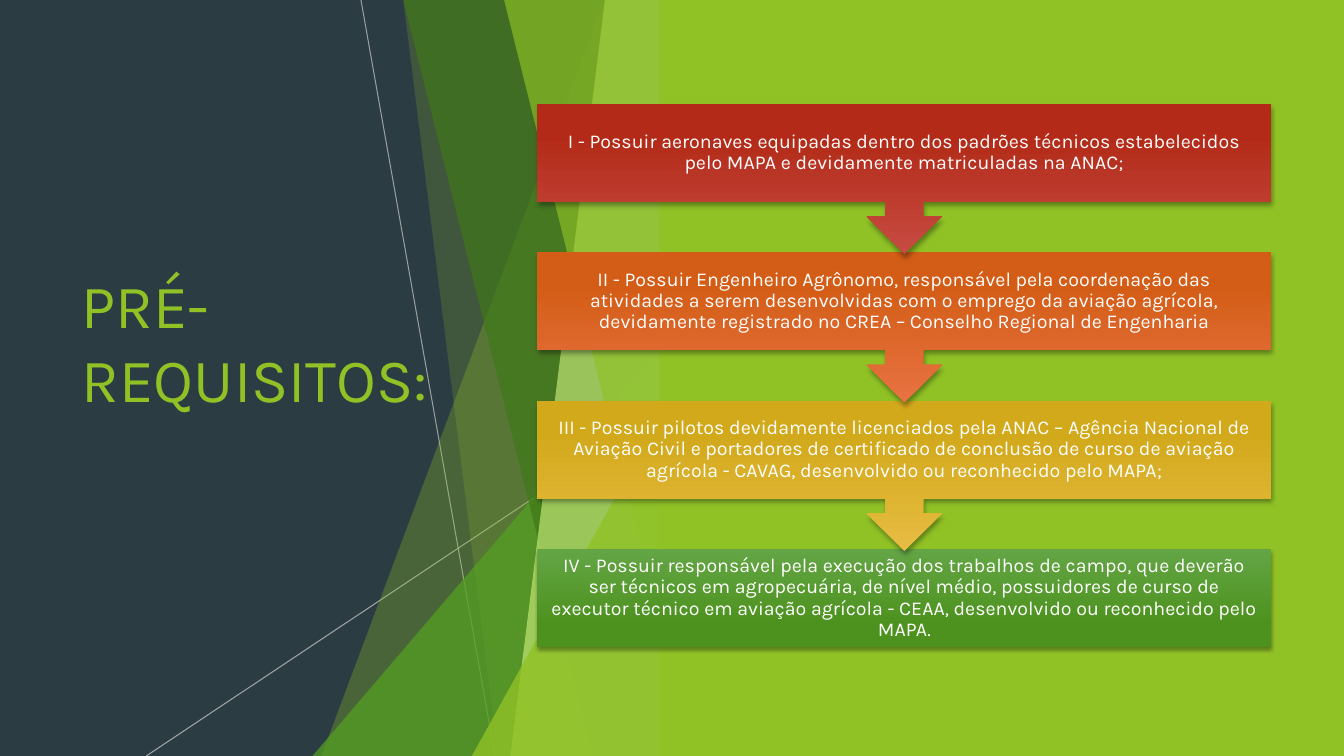
"""Build the slide that lists the four prior needs as a chain of steps."""
import dataclasses
import typing

import lxml.etree
import pptx
import pptx.dml.color
import pptx.enum.shapes
import pptx.enum.text
import pptx.oxml
import pptx.oxml.ns
import pptx.util

Inches = pptx.util.Inches
Pt = pptx.util.Pt
SHAPE = pptx.enum.shapes.MSO_SHAPE
ALIGN = pptx.enum.text.PP_ALIGN
ANCHOR = pptx.enum.text.MSO_ANCHOR
FONT = "Karla"
LIME = "90C226"
EDGE = 6.66
HIGH = 7.5
LEFT, TOP, WIDTH, BODY, PITCH, CALL = 5.33, 1.03, 7.28, 0.97, 1.473, 1.49


@dataclasses.dataclass(frozen=True)
class Ray:
    start: tuple[float, float]
    end: tuple[float, float]
    alpha: int


@dataclasses.dataclass(frozen=True)
class Facet:
    top: float
    base: float
    color: str
    alpha: int


@dataclasses.dataclass(frozen=True)
class Peak:
    left: float
    top: float
    color: str
    alpha: int


@dataclasses.dataclass(frozen=True)
class Step:
    light: str
    dark: str
    text: str


RAYS = [
    Ray((3.58, 0), (4.91, HIGH), 75),
    Ray((EDGE, 4.03), (1.45, HIGH), 80),
]
PANES: list[Facet | Peak] = [
    Facet(5.61, 3.37, LIME, 30),
    Facet(3.84, 5.16, LIME, 20),
    Peak(3.1, 3.33, "54A021", 72),
    Facet(3.54, 6.24, "3F7819", 70),
    Facet(6.37, 5.25, "C0E474", 70),
    Facet(5.3, 6.51, LIME, 65),
    Peak(4.68, 3.93, LIME, 80),
]
STEPS = [
    Step("C74B42", "B32B18", "I - Possuir aeronaves equipadas dentro dos padrões técnicos "
         "estabelecidos pelo MAPA e devidamente matriculadas na ANAC;"),
    Step("E87242", "D35D16", "II - Possuir Engenheiro Agrônomo, responsável pela coordenação "
         "das atividades a serem desenvolvidas com o emprego da aviação agrícola, devidamente "
         "registrado no CREA – Conselho Regional de Engenharia"),
    Step("E7BC43", "D2A91B", "III - Possuir pilotos devidamente licenciados pela ANAC – Agência "
         "Nacional de Aviação Civil e portadores de certificado de conclusão de curso de aviação "
         "agrícola - CAVAG, desenvolvido ou reconhecido pelo MAPA;"),
    Step("63A545", "4D921E", "IV - Possuir responsável pela execução dos trabalhos de campo, que "
         "deverão ser técnicos em agropecuária, de nível médio, possuidores de curso de executor "
         "técnico em aviação agrícola - CEAA, desenvolvido ou reconhecido pelo MAPA."),
]


def tint(code: str) -> pptx.dml.color.RGBColor:
    return pptx.dml.color.RGBColor.from_string(code)


def fade(part: typing.Any, alpha: int) -> None:
    color = next(part.iter(pptx.oxml.ns.qn("a:srgbClr")))
    node = lxml.etree.SubElement(color, pptx.oxml.ns.qn("a:alpha"))
    node.set("val", str(alpha * 1000))


def paint(shape: typing.Any, code: str, alpha: int = 100) -> None:
    shape.fill.solid()
    shape.fill.fore_color.rgb = tint(code)
    shape.line.fill.background()
    shape.shadow.inherit = False
    if alpha < 100:
        fade(shape._element.spPr, alpha)


def draw_ray(shapes: typing.Any, ray: Ray) -> None:
    ends = [Inches(n) for n in ray.start + ray.end]
    line = shapes.add_connector(pptx.enum.shapes.MSO_CONNECTOR.STRAIGHT, *ends)
    line.line.color.rgb = tint("BFBFBF")
    line.line.width = Pt(0.75)
    fade(line._element.spPr, ray.alpha)
    lxml.etree.SubElement(line._element.spPr, pptx.oxml.ns.qn("a:effectLst"))


def draw_pane(shapes: typing.Any, pane: Facet | Peak) -> None:
    if isinstance(pane, Peak):
        shape = shapes.add_shape(SHAPE.ISOSCELES_TRIANGLE, Inches(pane.left), Inches(pane.top),
                                 Inches(EDGE - pane.left), Inches(HIGH - pane.top))
        shape.adjustments[0] = 1
    else:
        form = shapes.build_freeform(pane.top, -0.01, scale=Inches(1))
        form.add_line_segments([(EDGE, -0.01), (EDGE, HIGH), (pane.base, HIGH)], close=True)
        shape = form.convert_to_shape()
    paint(shape, pane.color, pane.alpha)


def write(shapes: typing.Any, area: tuple[float, float, float, float], text: str,
          size: int, code: str, align: typing.Any) -> typing.Any:
    frame = shapes.add_textbox(*[Inches(n) for n in area]).text_frame
    frame.word_wrap = True
    frame.vertical_anchor = ANCHOR.MIDDLE
    frame.text = text
    line = frame.paragraphs[0]
    line.alignment = align
    line.font.name = FONT
    line.font.size = Pt(size)
    line.font.color.rgb = tint(code)
    return frame


def shade(shape: typing.Any, step: Step) -> None:
    shape.line.fill.background()
    shape.fill.gradient()
    shape.fill.gradient_angle = 270
    for stop, code, place in zip(shape.fill.gradient_stops, (step.light, step.dark), (0, 0.78)):
        stop.color.rgb = tint(code)
        stop.position = place
    shape._element.spPr.append(pptx.oxml.parse_xml(
        f'<a:effectLst {pptx.oxml.ns.nsdecls("a")}>'
        '<a:outerShdw blurRad="38100" dist="25400" dir="5400000" rotWithShape="0">'
        '<a:srgbClr val="000000"><a:alpha val="35000"/></a:srgbClr>'
        '</a:outerShdw></a:effectLst>'))


def draw_step(shapes: typing.Any, rank: int, step: Step) -> None:
    top = TOP + rank * PITCH
    last = rank == len(STEPS) - 1
    kind = SHAPE.RECTANGLE if last else SHAPE.UP_ARROW_CALLOUT
    shape = shapes.add_shape(kind, Inches(LEFT), Inches(top), Inches(WIDTH),
                             Inches(BODY if last else CALL))
    shape.rotation = 0 if last else 180
    shade(shape, step)
    frame = write(shapes, (LEFT, top, WIDTH, BODY), step.text, 14, "FFFFFF", ALIGN.CENTER)
    frame.margin_left = frame.margin_right = Inches(0.11)
    frame.margin_top = frame.margin_bottom = Inches(0.11)
    frame.paragraphs[0].line_spacing = 0.9
    frame.paragraphs[0].space_after = Pt(4.9)


def main() -> None:
    deck = pptx.Presentation()
    deck.slide_width, deck.slide_height = Inches(13.33), Inches(HIGH)
    slide = deck.slides.add_slide(deck.slide_layouts[6])
    slide.background.fill.solid()
    slide.background.fill.fore_color.rgb = tint("2C3C43")
    shapes = slide.shapes
    write(shapes, (0.71, 1.51, 3.88, 4.48), "PRÉ-REQUISITOS:\v", 44, LIME, ALIGN.LEFT)
    for ray in RAYS:
        draw_ray(shapes, ray)
    for pane in PANES:
        draw_pane(shapes, pane)
    field = shapes.add_shape(SHAPE.RECTANGLE, Inches(6.54), 0, Inches(6.79), Inches(HIGH))
    paint(field, LIME)
    for rank, step in reversed(list(enumerate(STEPS))):
        draw_step(shapes, rank, step)
    deck.save("out.pptx")


if __name__ == "__main__":
    main()
